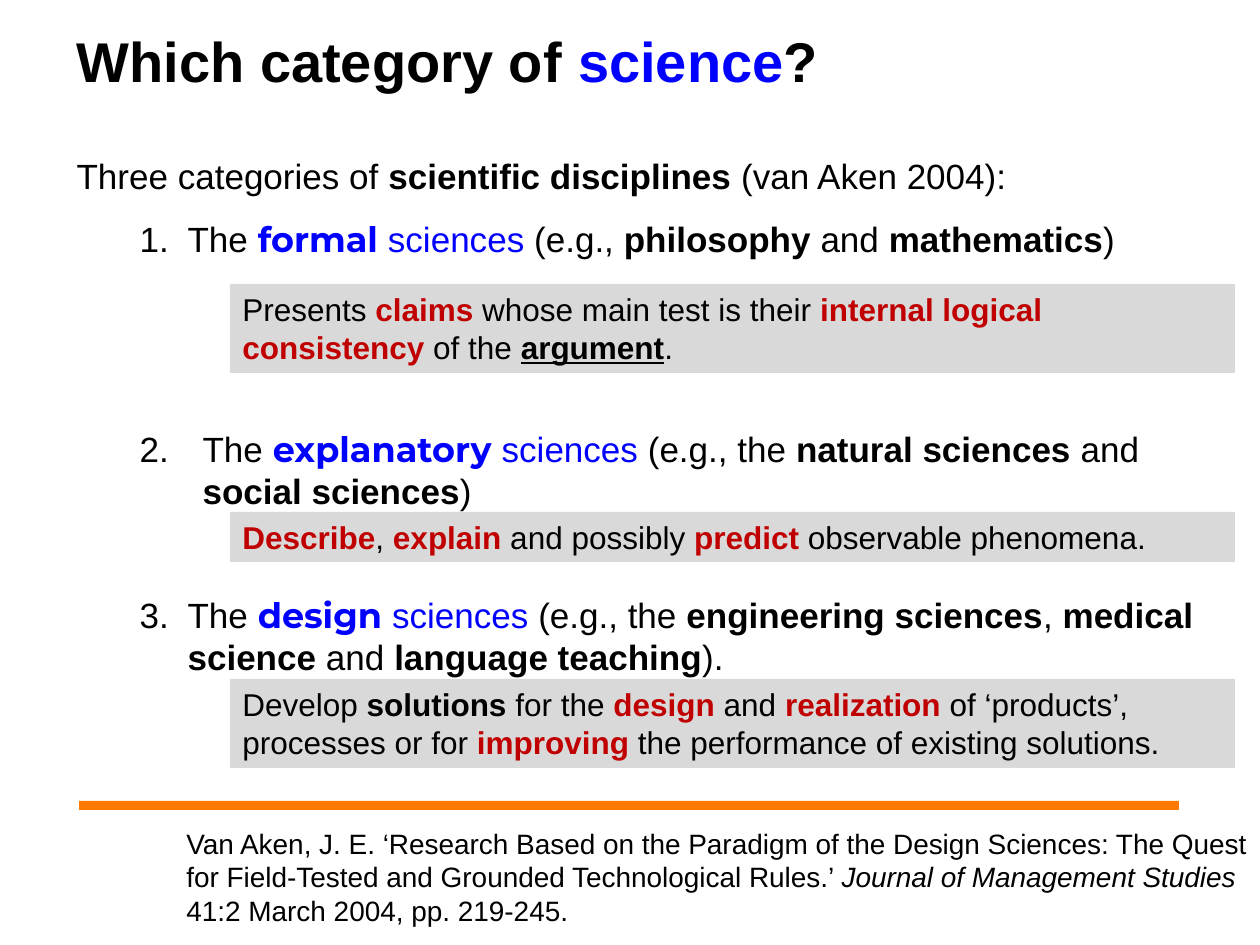
from dataclasses import dataclass

from lxml import etree
from pptx import Presentation
from pptx.dml.color import RGBColor
from pptx.enum.shapes import MSO_SHAPE
from pptx.enum.text import MSO_ANCHOR, MSO_AUTO_SIZE, PP_ALIGN
from pptx.oxml.ns import qn
from pptx.util import Pt

RECTANGLE = MSO_SHAPE.RECTANGLE
TOP = MSO_ANCHOR.TOP
NO_FIT = MSO_AUTO_SIZE.NONE
LEFT = PP_ALIGN.LEFT

EMU_PER_PX = 914400 / 126
COLORS = {
    "text": "000000",
    "topic": "0000FF",
    "key": "C00000",
    "note": "D9D9D9",
    "rule": "FF7900",
    "paper": "FFFFFF",
}
STYLES = {
    "plain": {},
    "bold": {"bold": True},
    "italic": {"italic": True},
    "underlined": {"bold": True, "underline": True},
    "topic": {"color": "topic"},
    "topic bold": {"color": "topic", "bold": True},
    "topic name": {"color": "topic", "bold": True, "name": "Montserrat"},
    "key": {"color": "key", "bold": True},
}


@dataclass
class Span:
    text: str
    style: str = "plain"


@dataclass
class Line:
    spans: list[Span]
    size: int
    space_before: int = 0
    line_spacing: float = 1.0
    number: int = 0
    margin: int = 0
    hanging: int = 0


@dataclass
class Frame:
    left: int
    top: int
    width: int
    height: int


@dataclass
class Note:
    frame: Frame
    spans: list[Span]


TITLE = Line(
    [Span("Which category of ", "bold"), Span("science", "topic bold"), Span("?", "bold")],
    size=32,
    line_spacing=1.07,
)
BODY = [
    Line(
        [
            Span("Three categories of "),
            Span("scientific disciplines ", "bold"),
            Span("(van Aken 2004):"),
        ],
        size=20,
        line_spacing=1.07,
    ),
    Line(
        [
            Span("The "),
            Span("formal ", "topic name"),
            Span("sciences ", "topic"),
            Span("(e.g., "),
            Span("philosophy", "bold"),
            Span(" and "),
            Span("mathematics", "bold"),
            Span(")"),
        ],
        size=20, space_before=12, number=1, margin=111, hanging=48,
    ),
    Line(
        [
            Span("The "),
            Span("explanatory ", "topic name"),
            Span("sciences ", "topic"),
            Span("(e.g., the "),
            Span("natural sciences", "bold"),
            Span(" and "),
            Span("social sciences", "bold"),
            Span(")"),
        ],
        size=20, space_before=96, number=2, margin=126, hanging=63,
    ),
    Line(
        [
            Span("The "),
            Span("design ", "topic name"),
            Span("sciences ", "topic"),
            Span("(e.g., the "),
            Span("engineering sciences", "bold"),
            Span(", "),
            Span("medical science", "bold"),
            Span(" and "),
            Span("language teaching", "bold"),
            Span(")."),
        ],
        size=20, space_before=47, number=3, margin=111, hanging=48,
    ),
]
NOTES = [
    Note(Frame(230, 284, 1005, 89), [
        Span("Presents "),
        Span("claims", "key"),
        Span(" whose main test is their "),
        Span("internal logical consistency ", "key"),
        Span("of the "),
        Span("argument", "underlined"),
        Span("."),
    ]),
    Note(Frame(230, 512, 1005, 50), [
        Span("Describe", "key"),
        Span(", "),
        Span("explain", "key"),
        Span(" and possibly "),
        Span("predict", "key"),
        Span(" observable phenomena."),
    ]),
    Note(Frame(230, 679, 1005, 89), [
        Span("Develop "),
        Span("solutions", "bold"),
        Span(" for the "),
        Span("design", "key"),
        Span(" and "),
        Span("realization", "key"),
        Span(" of ‘products’, processes or for "),
        Span("improving", "key"),
        Span(" the performance of existing solutions."),
    ]),
]
CITATION = Line(
    [
        Span("Van Aken, J. E. ‘Research Based on the Paradigm of the Design Sciences: "
             "The Quest for Field-Tested and Grounded Technological Rules.’ "),
        Span("Journal of Management Studies ", "italic"),
        Span("41:2 March 2004, pp. 219-245."),
    ],
    size=16,
)


def emu(px: int) -> int:
    return round(px * EMU_PER_PX)


def place(box, frame: Frame) -> None:
    for side in ("left", "top", "width", "height"):
        setattr(box, side, emu(getattr(frame, side)))


def set_bullet(para, line: Line) -> None:
    properties = para._p.get_or_add_pPr()
    properties.set("marL", str(emu(line.margin)))
    properties.set("indent", str(-emu(line.hanging)))
    if line.number:
        bullet = etree.SubElement(properties, qn("a:buAutoNum"), type="arabicPeriod")
        bullet.set("startAt", str(line.number))
    else:
        etree.SubElement(properties, qn("a:buNone"))


def write(box, lines: list[Line]) -> None:
    text_frame = box.text_frame
    settings = {"word_wrap": True, "auto_size": NO_FIT, "vertical_anchor": TOP}
    for name, value in settings.items():
        setattr(text_frame, name, value)
    for index, line in enumerate(lines):
        para = text_frame.add_paragraph() if index else text_frame.paragraphs[0]
        para.level = 1 if line.number else 0
        set_bullet(para, line)
        layout = {"alignment": LEFT, "line_spacing": line.line_spacing,
                  "space_before": Pt(line.space_before), "space_after": Pt(0)}
        for name, value in layout.items():
            setattr(para, name, value)
        for span in line.spans:
            run = para.add_run()
            run.text = span.text
            font = {"name": "Arial", "size": Pt(line.size), "bold": False,
                    "color": "text"} | STYLES[span.style]
            run.font.color.rgb = RGBColor.from_string(COLORS[font.pop("color")])
            for name, value in font.items():
                setattr(run.font, name, value)


def add_rectangle(page, frame: Frame, color: str):
    box = page.shapes.add_shape(RECTANGLE, 0, 0, 0, 0)
    place(box, frame)
    box.shadow.inherit = False
    box.fill.solid()
    box.fill.fore_color.rgb = RGBColor.from_string(COLORS[color])
    box.line.fill.background()
    return box


def main() -> None:
    deck = Presentation()
    deck.slide_width, deck.slide_height = emu(1260), emu(945)
    page = deck.slides.add_slide(deck.slide_layouts[1])
    title, body = page.placeholders
    place(title, Frame(64, 16, 1171, 82))
    write(title, [TITLE])
    place(body, Frame(64, 145, 1142, 540))
    write(body, BODY)
    add_rectangle(page, Frame(79, 801, 1100, 9), "rule")
    write(add_rectangle(page, Frame(174, 820, 1086, 115), "paper"), [CITATION])
    for note in NOTES:
        write(add_rectangle(page, note.frame, "note"), [Line(note.spans, size=18)])
    deck.save("out.pptx")


if __name__ == "__main__":
    main()
